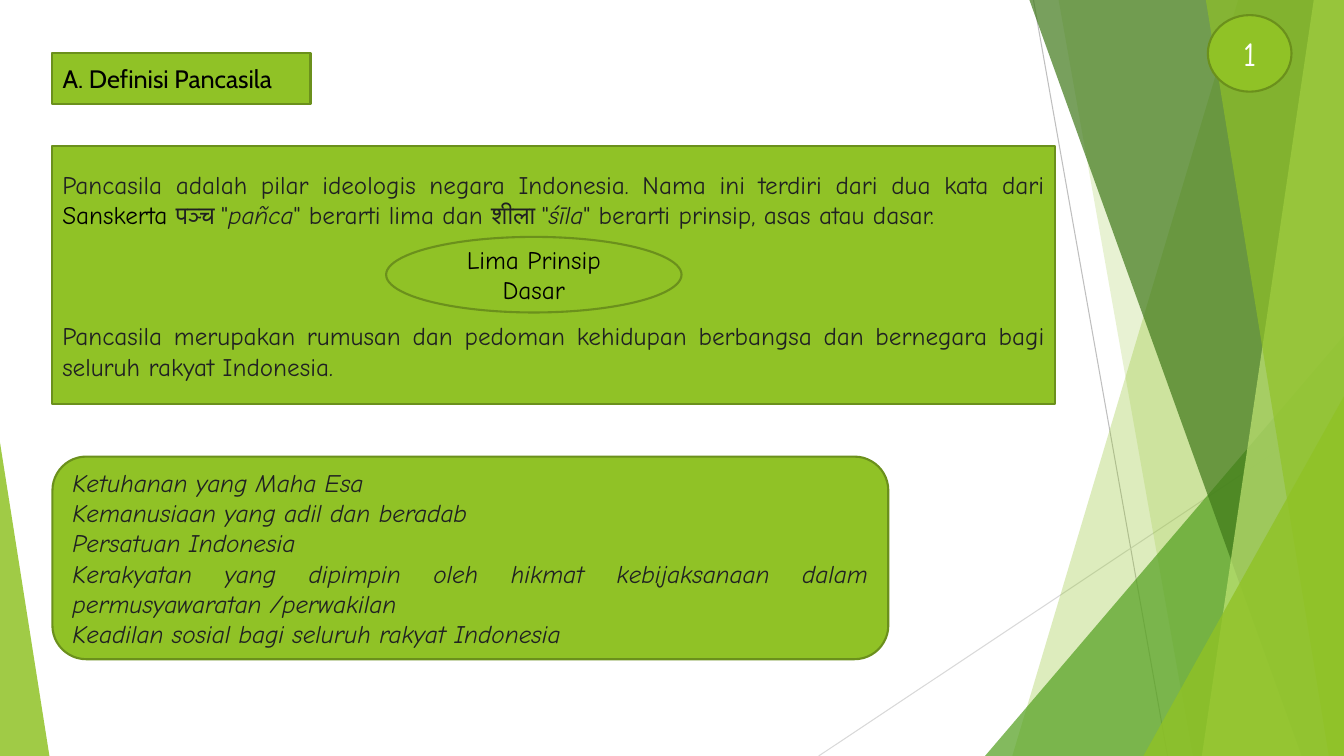
import pptx
import pptx.util
import pptx.dml.color
import pptx.enum.shapes
import pptx.enum.text
import pptx.oxml
import pptx.oxml.ns

Inches = pptx.util.Inches
Pt = pptx.util.Pt
RGBColor = pptx.dml.color.RGBColor
SHAPE = pptx.enum.shapes.MSO_SHAPE
ALIGN = pptx.enum.text.PP_ALIGN

LIME = RGBColor(0x90, 0xC2, 0x26)
OLIVE = RGBColor(0x6B, 0x90, 0x1C)
GREEN = RGBColor(0x54, 0xA0, 0x21)
FOREST = RGBColor(0x3F, 0x78, 0x19)
PALE_LIME = RGBColor(0xC0, 0xE4, 0x74)
GREY = RGBColor(0xBF, 0xBF, 0xBF)
LIGHT_GREY = RGBColor(0xD9, 0xD9, 0xD9)
INK = RGBColor(0x20, 0x21, 0x22)
BLACK = RGBColor(0, 0, 0)
WHITE = RGBColor(0xFF, 0xFF, 0xFF)

COMIC = "Comic Neue"
WIDTH, HEIGHT = 13.33, 7.5


def paint(shape, color, opacity=None):
    """Fill a shape: translucent without outline, or solid with an olive one."""
    shape.fill.solid()
    shape.fill.fore_color.rgb = color
    if opacity is None:
        shape.line.color.rgb = OLIVE
        shape.line.width = Pt(1.5)
        shape.text_frame.word_wrap = True
        shape.text_frame.auto_size = pptx.enum.text.MSO_AUTO_SIZE.NONE
        shape.text_frame.vertical_anchor = pptx.enum.text.MSO_ANCHOR.MIDDLE
    else:
        srgb = shape.fill._xPr.find(".//" + pptx.oxml.ns.qn("a:srgbClr"))
        alpha = srgb.makeelement(pptx.oxml.ns.qn("a:alpha"), {"val": str(opacity * 1000)})
        srgb.append(alpha)
        shape.line.fill.background()
    if not shape.is_placeholder:
        shape.shadow.inherit = False


def write(paragraph, text, color=INK, font=COMIC, italic=False, size=18):
    run = paragraph.add_run()
    run.text = text
    run.font.name = font
    run.font.size = Pt(size)
    run.font.italic = italic
    run.font.color.rgb = color


prs = pptx.Presentation()
prs.slide_width, prs.slide_height = Inches(WIDTH), Inches(HEIGHT)
slide = prs.slides.add_slide(prs.slide_layouts[1])
shapes = slide.shapes
heading, principles = slide.placeholders

# Thin crossing lines on the right
for x1, y1, x2, y2, color in [(10.25, 0, 11.58, HEIGHT, GREY),
                              (WIDTH, 4.03, 8.12, HEIGHT, LIGHT_GREY)]:
    ray = shapes.add_connector(pptx.enum.shapes.MSO_CONNECTOR.STRAIGHT,
                               Inches(x1), Inches(y1), Inches(x2), Inches(y2))
    ray.line.color.rgb = color
    ray.line.width = Pt(0.75)
    pptx.oxml.ns.qn("a:effectLst")
    ray._element.spPr.append(
        ray._element.makeelement(pptx.oxml.ns.qn("a:effectLst"), {}))

# Translucent facets reaching the right edge: top, left x at top and bottom
facets = [
    (0, 12.28, 10.04, LIME, 30),
    (0, 10.5, 11.83, LIME, 20),
    (3.33, WIDTH, 9.77, GREEN, 72),
    (0, 10.21, 12.91, FOREST, 70),
    (0, 13.03, 11.92, PALE_LIME, 70),
    (0, 11.96, 13.18, LIME, 65),
    (3.93, WIDTH, 11.34, LIME, 80),
]
for top, top_x, bottom_x, color, opacity in facets:
    if top_x == WIDTH:
        facet = shapes.add_shape(SHAPE.ISOSCELES_TRIANGLE, Inches(bottom_x), Inches(top),
                                 Inches(WIDTH - bottom_x), Inches(HEIGHT - top))
        facet.adjustments[0] = 1
    else:
        outline = shapes.build_freeform(Inches(top_x), Inches(top))
        outline.add_line_segments([(Inches(x), Inches(y)) for x, y in [
            (WIDTH, top), (WIDTH, HEIGHT), (bottom_x, HEIGHT)]])
        facet = outline.convert_to_shape()
    paint(facet, color, opacity)

# Facet in the lower left corner
corner = shapes.add_shape(SHAPE.ISOSCELES_TRIANGLE, 0, Inches(4.39), Inches(0.49), Inches(3.11))
corner.adjustments[0] = 0
paint(corner, LIME, 85)

# Heading and list of principles take rounded boxes
for box, bounds in [(heading, (0.52, 0.53, 2.56, 0.5)),
                    (principles, (0.52, 4.53, 8.29, 2.01))]:
    box.left, box.top, box.width, box.height = map(Inches, bounds)
    box._element.spPr.append(pptx.oxml.parse_xml(
        '<a:prstGeom %s prst="roundRect"><a:avLst/></a:prstGeom>' % pptx.oxml.ns.nsdecls("a")))
    paint(box, LIME)

title_line = heading.text_frame.paragraphs[0]
title_line.alignment = ALIGN.JUSTIFY
write(title_line, "A. Definisi Pancasila", BLACK, "Cabin")

sila = [
    "Ketuhanan yang Maha Esa",
    "Kemanusiaan yang adil dan beradab",
    "Persatuan Indonesia",
    "Kerakyatan yang dipimpin oleh hikmat kebijaksanaan dalam permusyawaratan /perwakilan",
    "Keadilan sosial bagi seluruh rakyat Indonesia",
]
for index, text in enumerate(sila):
    frame = principles.text_frame
    line = frame.add_paragraph() if index else frame.paragraphs[0]
    line.alignment = ALIGN.JUSTIFY
    line.space_before = Pt(0)
    properties = line._p.get_or_add_pPr()
    properties.set("marL", "0")
    properties.set("indent", "0")
    properties.append(properties.makeelement(pptx.oxml.ns.qn("a:buNone"), {}))
    write(line, text, italic=True)

# Definition, with room between its paragraphs for the oval
definition = shapes.add_shape(SHAPE.RECTANGLE, Inches(0.52), Inches(1.45), Inches(9.94), Inches(2.56))
paint(definition, LIME)
origin = definition.text_frame.paragraphs[0]
origin.alignment = ALIGN.JUSTIFY
write(origin, "Pancasila adalah pilar ideologis negara Indonesia. "
              "Nama ini terdiri dari dua kata dari ")
write(origin, "Sanskerta ", BLACK)
write(origin, "पञ्च ", font="Arial")
write(origin, "\"")
write(origin, "pañca", italic=True)
write(origin, "\" berarti lima dan शीला \"")
write(origin, "śīla", italic=True)
write(origin, "\" berarti prinsip, asas atau dasar.")
role = definition.text_frame.add_paragraph()
role.alignment = ALIGN.JUSTIFY
role.space_before = Pt(65)
write(role, "Pancasila merupakan rumusan dan pedoman kehidupan berbangsa "
            "dan bernegara bagi seluruh rakyat Indonesia.")

# Ovals: the meaning of the name and the page number
for bounds, text, color, size in [((3.83, 2.35, 2.93, 0.75), "Lima Prinsip Dasar", BLACK, 18),
                                  ((11.98, 0.15, 0.83, 0.76), "1", WHITE, 24)]:
    oval = shapes.add_shape(SHAPE.OVAL, *map(Inches, bounds))
    paint(oval, LIME)
    caption = oval.text_frame.paragraphs[0]
    caption.alignment = ALIGN.CENTER
    write(caption, text, color, size=size)

prs.save("out.pptx")
